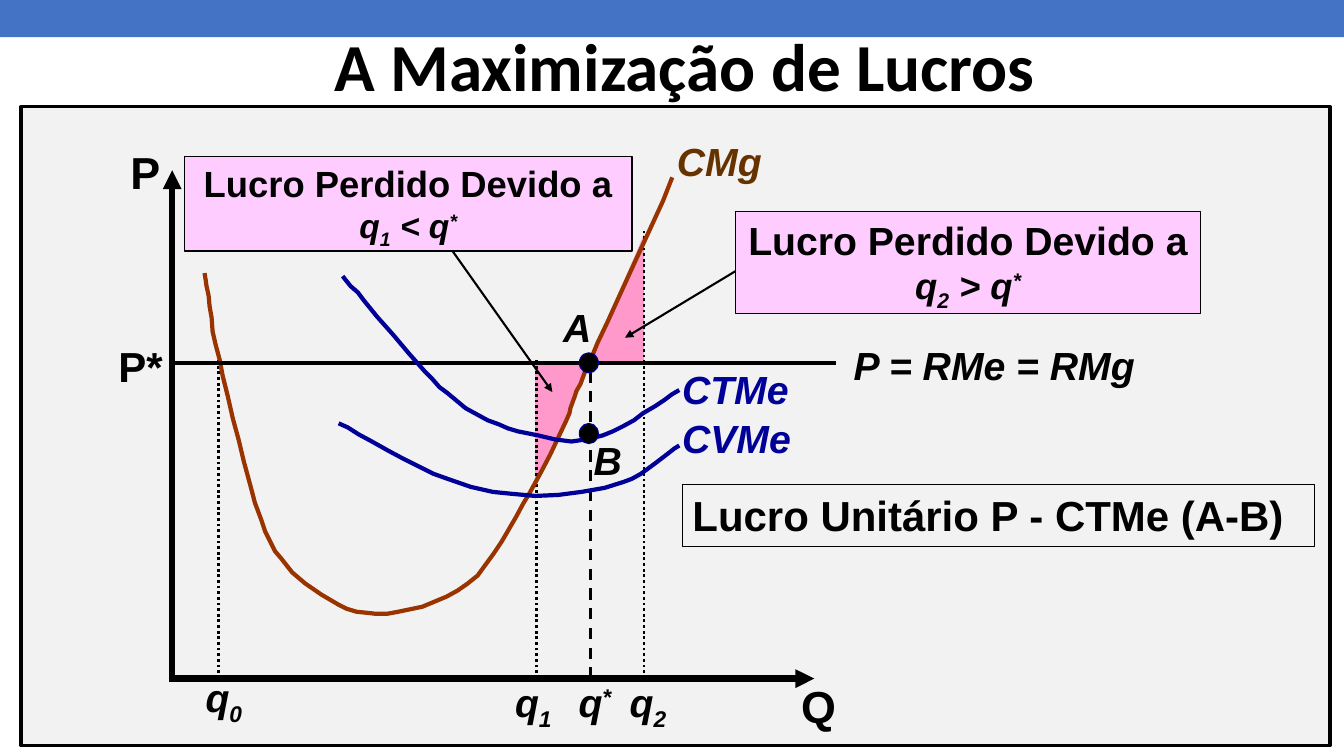
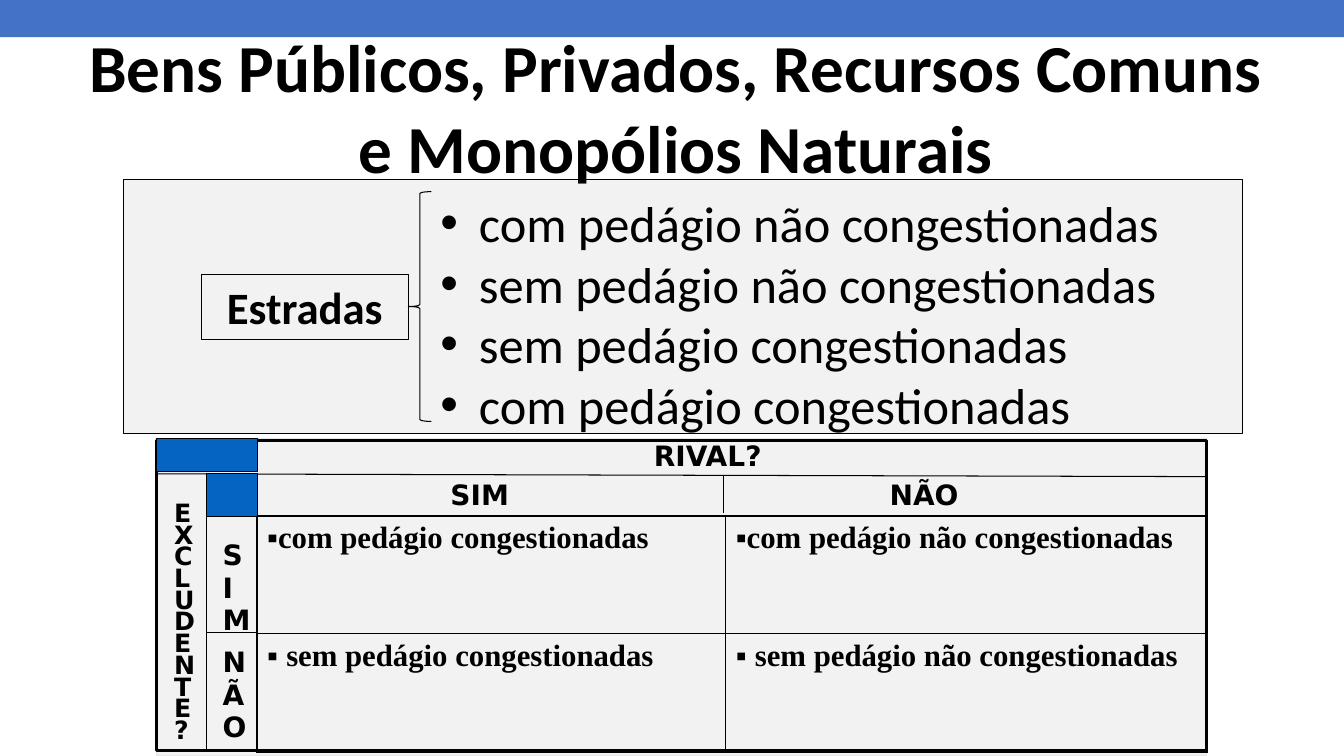
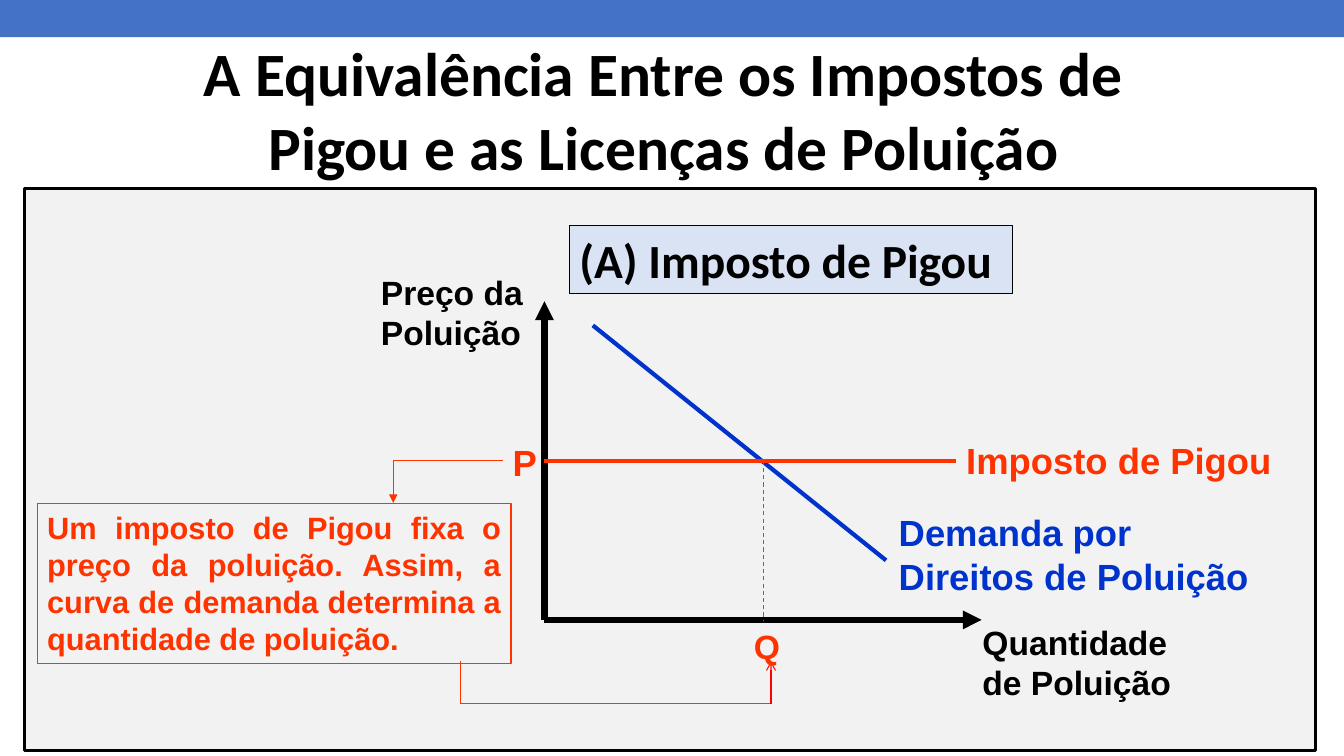
from dataclasses import dataclass
from typing import NamedTuple, Optional

from lxml.etree import SubElement
from pptx import Presentation
from pptx.dml.color import RGBColor
from pptx.enum.dml import MSO_LINE
from pptx.enum.shapes import MSO_CONNECTOR, MSO_SHAPE
from pptx.enum.text import MSO_ANCHOR, PP_ALIGN
from pptx.oxml.ns import qn
from pptx.util import Cm, Pt

COLORS = {
    "black": "000000", "band": "4472C4", "panel": "F2F2F2", "pale": "E7E6E6",
    "loss": "FF99CC", "callout": "FFCCFF", "marginal": "993300",
    "marginal_label": "663300", "average": "000099", "corner": "0563C1",
    "demand": "0033CC", "tax": "FF3300", "pointer": "FF0000", "heading": "DAE3F3",
}
LEFT, CENTER, RIGHT = PP_ALIGN.LEFT, PP_ALIGN.CENTER, PP_ALIGN.RIGHT
BASELINES = {"_": "-25000", "^": "30000"}
CURVE_UNIT = Cm(0.0254)


class Box(NamedTuple):
    left: float
    top: float
    width: float
    height: float

    def lengths(self) -> list:
        return [Cm(value) for value in self]


class Segment(NamedTuple):
    x1: float
    y1: float
    x2: float
    y2: float


@dataclass
class Label:
    text: str
    box: Box
    size: int = 28
    color: str = "black"
    italic: bool = True
    align: PP_ALIGN = LEFT
    wrap: bool = False


class Curve(NamedTuple):
    color: str
    points: list


class Border(NamedTuple):
    left: float
    right: float
    top: float
    bottom: float


# Drawing helpers

def rgb(name: str) -> RGBColor:
    return RGBColor.from_string(COLORS[name])


def split_scripts(text: str) -> list:
    """Split text into (text, baseline) pairs; _x is subscript, ^x superscript."""
    pieces, plain, mark = [], "", None
    for char in text:
        if mark:
            pieces.append((char, BASELINES[mark]))
            mark = None
        elif char in BASELINES:
            pieces.append((plain, None))
            plain, mark = "", char
        else:
            plain += char
    pieces.append((plain, None))
    return [piece for piece in pieces if piece[0]]


def write(frame, text: str, *, size: float, font: str = "Arial", color: str = "black",
          bold: bool = True, italic: bool = False, align: PP_ALIGN = LEFT,
          bullet: str = "", hang: float = 0, pitch: Optional[float] = None) -> None:
    """Add one paragraph to a text frame, using its empty first one if free."""
    first = frame.paragraphs[0]
    paragraph = frame.add_paragraph() if first.runs else first
    paragraph.alignment = align
    if pitch:
        paragraph.line_spacing = Pt(pitch)
    if bullet:
        properties = paragraph._p.get_or_add_pPr()
        properties.set("marL", str(Cm(hang)))
        properties.set("indent", str(-Cm(hang)))
        SubElement(properties, qn("a:buFont"), typeface="Arial")
        SubElement(properties, qn("a:buChar"), char=bullet)
    for piece, baseline in split_scripts(text):
        run = paragraph.add_run()
        run.text = piece
        run.font.name, run.font.size = font, Pt(size)
        run.font.bold, run.font.italic = bold, italic
        run.font.color.rgb = rgb(color)
        if baseline:
            run.font._element.set("baseline", baseline)


def text_box(slide, box: Box, *, wrap: bool = True, anchor: MSO_ANCHOR = MSO_ANCHOR.TOP):
    frame = slide.shapes.add_textbox(*box.lengths()).text_frame
    frame.word_wrap, frame.vertical_anchor = wrap, anchor
    return frame


def draw_label(slide, label: Label) -> None:
    frame = text_box(slide, label.box, wrap=label.wrap)
    write(frame, label.text, size=label.size, color=label.color,
          italic=label.italic, align=label.align)


def style(shape, fill: Optional[str], line: Optional[str], width: float) -> None:
    shape.shadow.inherit = False
    if fill:
        shape.fill.solid()
        shape.fill.fore_color.rgb = rgb(fill)
    else:
        shape.fill.background()
    if line:
        shape.line.color.rgb = rgb(line)
        shape.line.width = Pt(width)
    else:
        shape.line.fill.background()


def draw_shape(slide, box: Box, *, kind: MSO_SHAPE = MSO_SHAPE.RECTANGLE,
               fill: Optional[str] = None, line: Optional[str] = "black",
               width: float = 0.75, rotation: float = 0, wrap: bool = True):
    """Draw a preset shape and return its text frame."""
    shape = slide.shapes.add_shape(kind, *box.lengths())
    style(shape, fill, line, width)
    shape.rotation = rotation
    shape.text_frame.word_wrap = wrap
    shape.text_frame.vertical_anchor = MSO_ANCHOR.TOP
    return shape.text_frame


def draw_line(slide, segment: Segment, *, color: str = "black", width: float = 0.75,
              dash: Optional[MSO_LINE] = None, arrow: str = "") -> None:
    connector = slide.shapes.add_connector(
        MSO_CONNECTOR.STRAIGHT, *[Cm(value) for value in segment])
    connector.line.color.rgb = rgb(color)
    connector.line.width = Pt(width)
    if dash:
        connector.line.dash_style = dash
    if arrow:
        SubElement(connector.line._get_or_add_ln(), qn("a:tailEnd"), type=arrow)
    SubElement(connector._element.spPr, qn("a:effectLst"))


def draw_curve(slide, curve: Curve) -> None:
    start, *rest = curve.points
    builder = slide.shapes.build_freeform(*start, scale=CURVE_UNIT)
    builder.add_line_segments(rest, close=False)
    style(builder.convert_to_shape(), None, curve.color, 3)


def set_borders(cell, border: Border) -> None:
    properties = cell._tc.get_or_add_tcPr()
    for side, width in zip("LRTB", border):
        line = SubElement(properties, qn(f"a:ln{side}"), w=str(Pt(width)))
        SubElement(SubElement(line, qn("a:solidFill")), qn("a:srgbClr"), val=COLORS["black"])


def add_slide(deck):
    """Add a blank slide with the top band."""
    slide = deck.slides.add_slide(deck.slide_layouts[6])
    draw_shape(slide, Box(0, -0.08, 33.87, 1.02), fill="band", line=None)
    return slide


def draw_title(slide, text: str, box: Box, size: int = 48) -> None:
    frame = text_box(slide, box, anchor=MSO_ANCHOR.MIDDLE)
    write(frame, text, size=size, font="Calibri", align=CENTER)


# Slide 1: profit maximization

MARGINAL_COST = Curve("marginal", [
    (203, 271), (204, 277), (205, 284), (207, 293), (208, 304), (210, 315), (211, 329),
    (214, 342), (218, 357), (221, 373), (226, 393), (231, 415), (237, 437), (242, 458),
    (248, 480), (253, 499), (259, 515), (263, 527), (268, 537), (273, 547), (279, 554),
    (290, 568), (303, 579), (319, 590), (336, 600), (344, 604), (354, 607), (364, 608),
    (373, 609), (384, 609), (395, 607), (419, 602), (443, 592), (454, 586), (464, 579),
    (474, 571), (482, 560), (490, 549), (498, 537), (512, 513), (519, 500), (525, 490),
    (536, 470), (546, 451), (562, 417), (565, 410), (566, 405), (570, 394), (572, 388),
    (576, 381), (580, 370), (586, 357), (593, 340), (603, 319), (613, 297), (624, 273),
    (647, 223), (658, 199), (667, 176)])
AVERAGE_VARIABLE_COST = Curve("average", [
    (336, 420), (345, 424), (356, 431), (369, 438), (385, 447), (400, 455), (416, 463),
    (430, 470), (444, 475), (467, 483), (489, 488), (509, 490), (531, 492), (554, 491),
    (577, 488), (600, 484), (619, 478), (627, 475), (636, 470), (651, 459), (664, 449),
    (669, 445), (674, 442)])
AVERAGE_TOTAL_COST = Curve("average", [
    (340, 274), (344, 279), (348, 284), (355, 290), (361, 298), (374, 314), (390, 332),
    (406, 351), (422, 369), (429, 376), (436, 384), (444, 390), (450, 395), (462, 405),
    (473, 411), (484, 417), (495, 421), (504, 425), (514, 428), (534, 432), (551, 436),
    (567, 438), (581, 436), (590, 434), (598, 432), (608, 428), (618, 423), (629, 417),
    (638, 410), (650, 403), (659, 397), (667, 391), (674, 387)])


def build_profit(deck) -> None:
    slide = add_slide(deck)
    draw_shape(slide, Box(0.53, 2.69, 32.99, 16.1), fill="panel", width=2.25)
    draw_title(slide, "A Maximização de Lucros", Box(5.59, 0.15, 23.34, 2.97))
    axis_x, axis_y, price_y = 4.34, 17.1, 9.14

    # Lost profit areas and quantity guides
    for left, top, rotation in ((13.94, 6.83, 270), (12.57, 10.03, 90)):
        draw_shape(slide, Box(left, top, 3.2, 1.37), kind=MSO_SHAPE.RIGHT_TRIANGLE,
                   fill="loss", line=None, rotation=rotation)
    for x, top, dash in ((5.51, 9.02, MSO_LINE.ROUND_DOT), (13.51, 9.02, MSO_LINE.ROUND_DOT),
                         (14.88, 9.04, MSO_LINE.DASH), (16.23, 5.82, MSO_LINE.ROUND_DOT)):
        draw_line(slide, Segment(x, axis_y, x, top), width=2, dash=dash)

    # Callouts
    for box, size, condition, pointer in (
            (Box(18.54, 5.33, 11.71, 2.57), 28, "q_2 > q^*", Segment(18.54, 6.83, 15.75, 8.51)),
            (Box(4.65, 3.94, 11.28, 2.39), 26, "q_1 < q^*", Segment(11.4, 6.32, 13.92, 9.88))):
        frame = draw_shape(slide, box, fill="callout", width=1, wrap=False)
        write(frame, "Lucro Perdido Devido a", size=size, align=CENTER)
        write(frame, condition, size=size - 2, italic=True, align=CENTER)
        draw_line(slide, pointer, width=1.5, arrow="triangle")

    # Axes, price line and curves
    draw_line(slide, Segment(axis_x, axis_y, axis_x, 4.29), width=4.5, arrow="triangle")
    draw_line(slide, Segment(4.27, axis_y, 20.52, axis_y), width=4.5, arrow="triangle")
    draw_curve(slide, MARGINAL_COST)
    draw_line(slide, Segment(axis_x, price_y, 21.08, price_y), width=3)
    for curve in (AVERAGE_VARIABLE_COST, AVERAGE_TOTAL_COST):
        draw_curve(slide, curve)
    for top in (8.89, 10.67):
        draw_shape(slide, Box(14.6, top, 0.48, 0.51), kind=MSO_SHAPE.OVAL,
                   fill="black", line="average")

    # Labels
    for label in (
            Label("q_0", Box(4.93, 16.84, 1.5, 1.45)),
            Label("q_1", Box(12.73, 16.97, 1.5, 1.45)),
            Label("q^*", Box(14.33, 16.97, 1.37, 1.45)),
            Label("q_2", Box(15.62, 16.97, 1.5, 1.45)),
            Label("P", Box(3.02, 3.53, 1.27, 1.63), 32, italic=False, align=RIGHT),
            Label("P*", Box(2.72, 8.46, 1.63, 1.52), 30, italic=False, align=RIGHT),
            Label("Q", Box(19.94, 16.97, 1.4, 1.63), 32, italic=False),
            Label("CMg", Box(16.81, 3.33, 2.67, 1.45), color="marginal_label"),
            Label("P = RMe = RMg", Box(21.26, 8.48, 7.67, 1.45)),
            Label("A", Box(13.94, 7.52, 1.22, 1.45)),
            Label("B", Box(14.71, 10.87, 1.22, 1.45)),
            Label("CVMe", Box(16.94, 10.31, 3.28, 1.45), color="average"),
            Label("CTMe", Box(16.94, 9.07, 3.23, 1.45), color="average")):
        draw_label(slide, label)
    frame = draw_shape(slide, Box(17.2, 12.22, 15.93, 1.55), fill="panel")
    write(frame, "Lucro Unitário P - CTMe (A-B)", size=30)


# Slide 2: kinds of goods

def build_goods(deck) -> None:
    slide = add_slide(deck)
    draw_shape(slide, Box(3.94, 11.05, 26.47, 8), fill="panel", line="pale")
    draw_shape(slide, Box(3.12, 4.52, 28.19, 6.4), fill="panel")

    # Rival and excludable grid
    answers = [["com pedágio congestionadas", "com pedágio não congestionadas"],
               ["sem pedágio congestionadas", "sem pedágio não congestionadas"]]
    table = slide.shapes.add_table(2, 2, Cm(6.48), Cm(13), Cm(23.93), Cm(5.94)).table
    table.first_row = table.horz_banding = False
    table.columns[0].width, table.columns[1].width = Cm(11.81), Cm(12.12)
    thick, thin = 2.25, 1
    for row, texts in enumerate(answers):
        table.rows[row].height = Cm(2.97)
        for column, text in enumerate(texts):
            cell = table.cell(row, column)
            set_borders(cell, Border(
                left=thin if column else thick, right=thick if column else thin,
                top=thin if row else thick, bottom=thick if row else thin))
            cell.fill.background()
            write(cell.text_frame, text, size=22, font="Times New Roman",
                  bullet="▪", hang=0.48 * row)

    # Roads list
    roads = text_box(slide, Box(10.85, 4.72, 20.12, 6.4))
    for road in ("com pedágio não congestionadas", "sem pedágio não congestionadas",
                 "sem pedágio congestionadas", "com pedágio congestionadas"):
        write(roads, road, size=36, font="Calibri", bold=False, bullet="•", hang=0.97)

    # Grid headings
    for text, box, align in (("RIVAL?", Box(16.23, 10.92, 6.15, 1.12), LEFT),
                             ("SIM", Box(9.09, 11.91, 6, 1.12), CENTER),
                             ("NÃO", Box(20.29, 11.91, 6, 1.12), CENTER)):
        write(text_box(slide, box), text, size=20, font="DejaVu Sans", align=align)
    for word, box, size, pitch in (("EXCLUDENTE?", Box(4.14, 12.62, 1.47, 6.3), 18, 15.5),
                                   ("SIM", Box(5.36, 13.46, 1.27, 2.7), 20, 23.2),
                                   ("NÃO", Box(5.36, 16.15, 1.27, 2.7), 20, 23.2)):
        frame = text_box(slide, box)
        for letter in word:
            write(frame, letter, size=size, font="DejaVu Sans", pitch=pitch)

    # Grid outline, rules and corner blocks
    draw_shape(slide, Box(3.94, 11.1, 26.47, 7.82), width=2.25)
    for rule in (Segment(3.94, 11.94, 30.38, 12.01), Segment(5.21, 11.94, 5.21, 18.92),
                 Segment(6.48, 15.95, 5.21, 15.95), Segment(18.24, 12.93, 18.24, 11.96)):
        draw_line(slide, rule)
    for corner in (Box(5.21, 11.94, 1.27, 1.07), Box(3.94, 11.05, 2.54, 0.84)):
        draw_shape(slide, corner, fill="corner")

    draw_shape(slide, Box(10.29, 4.83, 0.58, 5.79), kind=MSO_SHAPE.LEFT_BRACE)
    frame = draw_shape(slide, Box(5.08, 6.93, 5.21, 1.63))
    write(frame, "Estradas", size=32, font="Calibri", align=CENTER)
    draw_title(slide, "Bens Públicos, Privados, Recursos Comuns e Monopólios Naturais",
               Box(1.73, 1.02, 30.61, 3.3))


# Slide 3: Pigouvian tax

def build_tax(deck) -> None:
    slide = add_slide(deck)
    draw_shape(slide, Box(0.61, 4.75, 32.54, 14.17), fill="panel", width=2.25)
    draw_title(slide, "A Equivalência Entre os Impostos de Pigou e as Licenças de Poluição",
               Box(4.34, 0.74, 24.79, 4.01), size=44)
    origin_x, origin_y, tax_y = 13.72, 15.62, 11.61

    # Axes, demand and tax
    for axis in (Segment(origin_x, origin_y, origin_x, 7.59),
                 Segment(origin_x, origin_y, 24.74, origin_y)):
        draw_line(slide, axis, width=4.5, arrow="triangle")
    draw_line(slide, Segment(14.94, 8.2, 22.33, 14.12), color="demand", width=3)
    draw_line(slide, Segment(origin_x, tax_y, 24.1, tax_y), color="tax", width=3)
    draw_line(slide, Segment(19.23, tax_y, 19.23, origin_y), color="tax", dash=MSO_LINE.DASH)

    # Note and its pointers to price and quantity
    note = draw_shape(slide, Box(0.94, 12.7, 11.94, 4.01), line="tax")
    write(note, "Um imposto de Pigou fixa o preço da poluição. Assim, a curva de demanda "
          "determina a quantidade de poluição.", size=22, color="tax", align=PP_ALIGN.JUSTIFY)
    draw_line(slide, Segment(9.91, tax_y, 9.91, 12.67), color="tax", arrow="triangle")
    for link in (Segment(9.91, tax_y, 12.67, tax_y), Segment(11.61, 16.66, 11.61, 17.73),
                 Segment(11.61, 17.73, 19.43, 17.73)):
        draw_line(slide, link, color="tax")
    draw_line(slide, Segment(19.43, 17.73, 19.43, 16.66), color="pointer", arrow="arrow")

    # Labels
    for label in (
            Label("Preço da Poluição", Box(9.35, 6.73, 4.37, 2.31), 24, "black", False, wrap=True),
            Label("Quantidade de Poluição", Box(24.51, 15.54, 5.28, 2.31), 24, "black", False,
                  wrap=True),
            Label("Demanda por Direitos de Poluição", Box(22.4, 12.73, 9.53, 2.49), 26, "demand",
                  False, wrap=True),
            Label("Imposto de Pigou", Box(24.1, 10.92, 8.64, 1.37), 26, "tax", False, wrap=True),
            Label("P", Box(12.67, 10.97, 1.07, 1.37), 26, "tax", False, wrap=True),
            Label("Q", Box(18.75, 15.65, 1.07, 1.3), 24, "tax", False, wrap=True)):
        draw_label(slide, label)
    frame = draw_shape(slide, Box(14.35, 5.69, 11.18, 1.7), fill="heading")
    write(frame, "(A) Imposto de Pigou", size=34, font="Calibri")


def main() -> None:
    deck = Presentation()
    deck.slide_width, deck.slide_height = Cm(33.87), Cm(19.05)
    for build in (build_profit, build_goods, build_tax):
        build(deck)
    deck.save("out.pptx")


if __name__ == "__main__":
    main()
